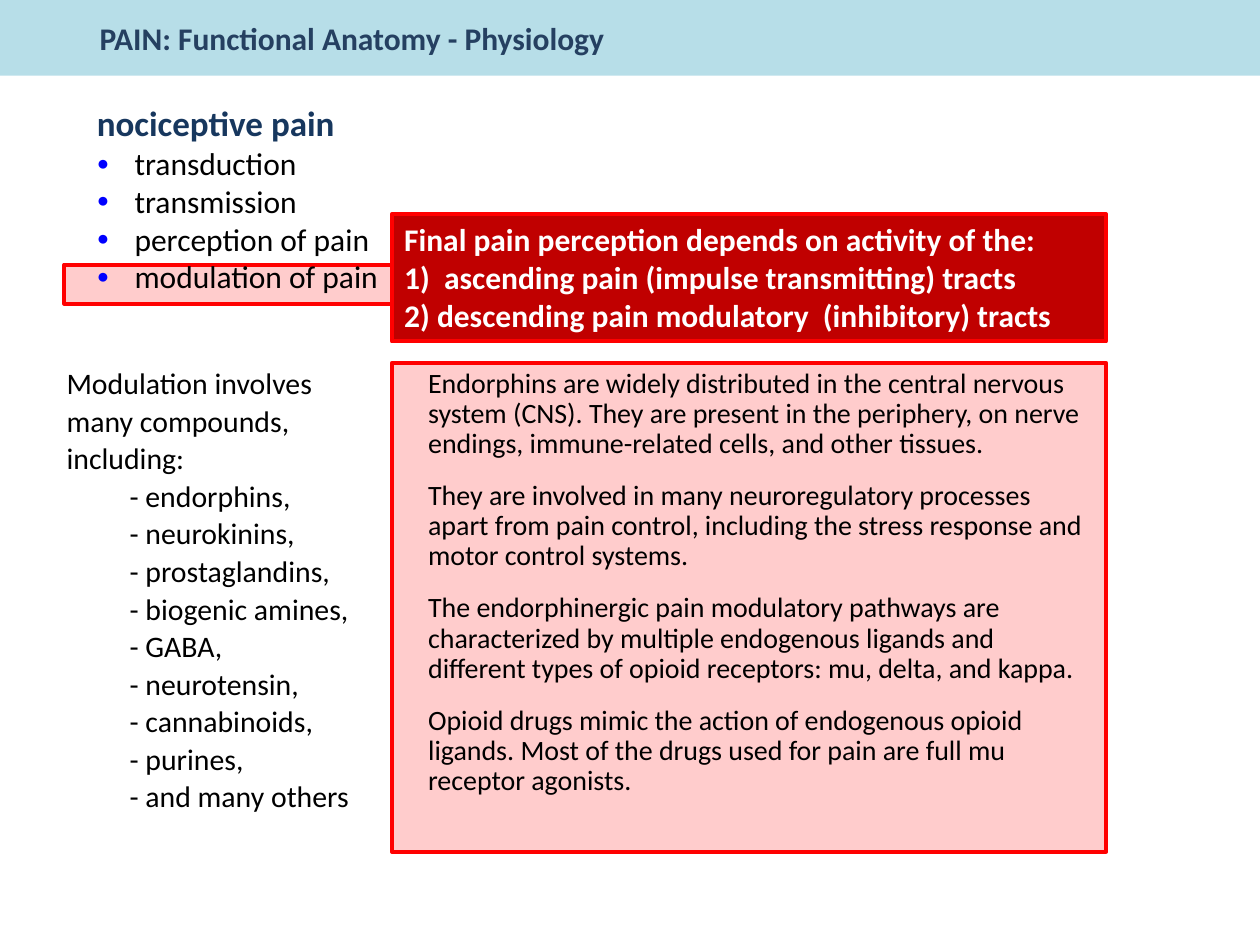
from lxml import etree
from pptx import Presentation
from pptx import util as u
from pptx.dml.color import RGBColor
from pptx.enum import shapes, text
from pptx.oxml.ns import qn

FONT = "Calibri"
RED, PINK, BLACK = "FF0000", "FFCCCC", "000000"

STAGES = ["transduction", "transmission", "perception of pain", "modulation of pain"]
PERCEPTION = [
    "Final pain perception depends on activity of the:",
    "1)  ascending pain (impulse transmitting) tracts",
    "2) descending pain modulatory  (inhibitory) tracts",
]
MODULATION = ["Modulation involves", "many compounds,", "including:"]
COMPOUNDS = [
    "endorphins,", "neurokinins,", "prostaglandins,", "biogenic amines,", "GABA,",
    "neurotensin,", "cannabinoids,", "purines,", "and many others",
]
ENDORPHINS = [
    "Endorphins are widely distributed in the central nervous system (CNS). They are "
    "present in the periphery, on nerve endings, immune-related cells, and other tissues.",
    "They are involved in many neuroregulatory processes apart from pain control, "
    "including the stress response and motor control systems.",
    "The endorphinergic pain modulatory pathways are characterized by multiple endogenous "
    "ligands and different types of opioid receptors: mu, delta, and kappa.",
    "Opioid drugs mimic the action of endogenous opioid ligands. Most of the drugs used "
    "for pain are full mu receptor agonists.",
]


def rgb(value):
    return RGBColor.from_string(value)


def add_bullet(properties, char, color, percent):
    bullet_color = etree.SubElement(properties, qn("a:buClr"))
    etree.SubElement(bullet_color, qn("a:srgbClr"), val=color)
    etree.SubElement(properties, qn("a:buSzPct"), val=str(percent * 1000))
    etree.SubElement(properties, qn("a:buFont"), typeface="Arial")
    etree.SubElement(properties, qn("a:buChar"), char=char)


def write(frame, content, size=18, color=BLACK, bold=False, align=text.PP_ALIGN.LEFT,
          level=0, margin=0, indent=0, line=None, before=0, bullet=None):
    """Add one paragraph, filling the first one if it is still empty."""
    first = frame.paragraphs[0]
    paragraph = frame.add_paragraph() if first.runs else first
    paragraph.alignment, paragraph.level = align, level
    paragraph.space_before = u.Pt(before)
    if line:
        paragraph.line_spacing = line
    properties = paragraph._p.get_or_add_pPr()
    properties.set("marL", str(u.Inches(margin)))
    properties.set("indent", str(u.Inches(indent)))
    if bullet:
        add_bullet(properties, *bullet)
    run = paragraph.add_run()
    run.text = content
    run.font.name, run.font.size, run.font.bold = FONT, u.Pt(size), bold
    run.font.color.rgb = rgb(color)


def set_frame(shape, anchor=text.MSO_ANCHOR.TOP):
    frame = shape.text_frame
    frame.word_wrap = True
    frame.auto_size = text.MSO_AUTO_SIZE.NONE
    frame.vertical_anchor = anchor
    return frame


def add_text(slide, *box):
    return set_frame(slide.shapes.add_textbox(*map(u.Inches, box)))


def add_panel(slide, fill, *box):
    panel = slide.shapes.add_shape(shapes.MSO_SHAPE.RECTANGLE, *map(u.Inches, box))
    panel.shadow.inherit = False
    panel.fill.solid()
    panel.fill.fore_color.rgb = rgb(fill)
    panel.line.color.rgb = rgb(RED)
    panel.line.width = u.Pt(2.25)
    return set_frame(panel)


def add_banner(slide, content):
    banner = slide.shapes.title
    banner.left, banner.top, banner.width, banner.height = map(u.Inches, (0, 0, 10, 0.6))
    banner.fill.solid()
    banner.fill.fore_color.rgb = rgb("B7DEE8")
    write(set_frame(banner, text.MSO_ANCHOR.MIDDLE), content,
          color="254061", bold=True, indent=0.69)


def main():
    deck = Presentation()
    deck.slide_width, deck.slide_height = u.Inches(10), u.Inches(7.5)
    slide = deck.slides.add_slide(deck.slide_layouts[5])
    add_banner(slide, "PAIN: Functional Anatomy - Physiology")

    # Stages of nociceptive pain, the last one highlighted
    add_panel(slide, PINK, 0.51, 2.1, 2.6, 0.31)
    stages = add_text(slide, 0.67, 0.76, 8.43, 1.95)
    write(stages, "nociceptive pain", size=20, color="17375E", bold=True)
    for stage in STAGES:
        write(stages, stage, align=text.PP_ALIGN.JUSTIFY, level=2,
              margin=0.3, indent=-0.3, bullet=("●", "0000FF", 65))

    # What pain perception depends on
    perception = add_panel(slide, "C00000", 3.11, 1.7, 5.67, 1.01)
    for statement in PERCEPTION:
        write(perception, statement, color="FFFFFF", bold=True)

    # Compounds involved in modulation
    modulation = add_text(slide, 0.43, 2.88, 3.31, 3.91)
    for i, phrase in enumerate(MODULATION):
        write(modulation, phrase, size=17, margin=0.38, indent=-0.38,
              line=0.9, before=3.1 if i else 0)
    for compound in COMPOUNDS:
        write(modulation, f"- {compound}", size=17, level=1, margin=0.81, indent=-0.31,
              line=0.9, before=3.1)

    # Role of endorphins
    endorphins = add_panel(slide, PINK, 3.11, 2.88, 5.67, 3.88)
    for i, fact in enumerate(ENDORPHINS):
        write(endorphins, fact, size=16, margin=0.19, line=0.9, before=12.4 if i else 0)

    deck.save("out.pptx")


if __name__ == "__main__":
    main()
